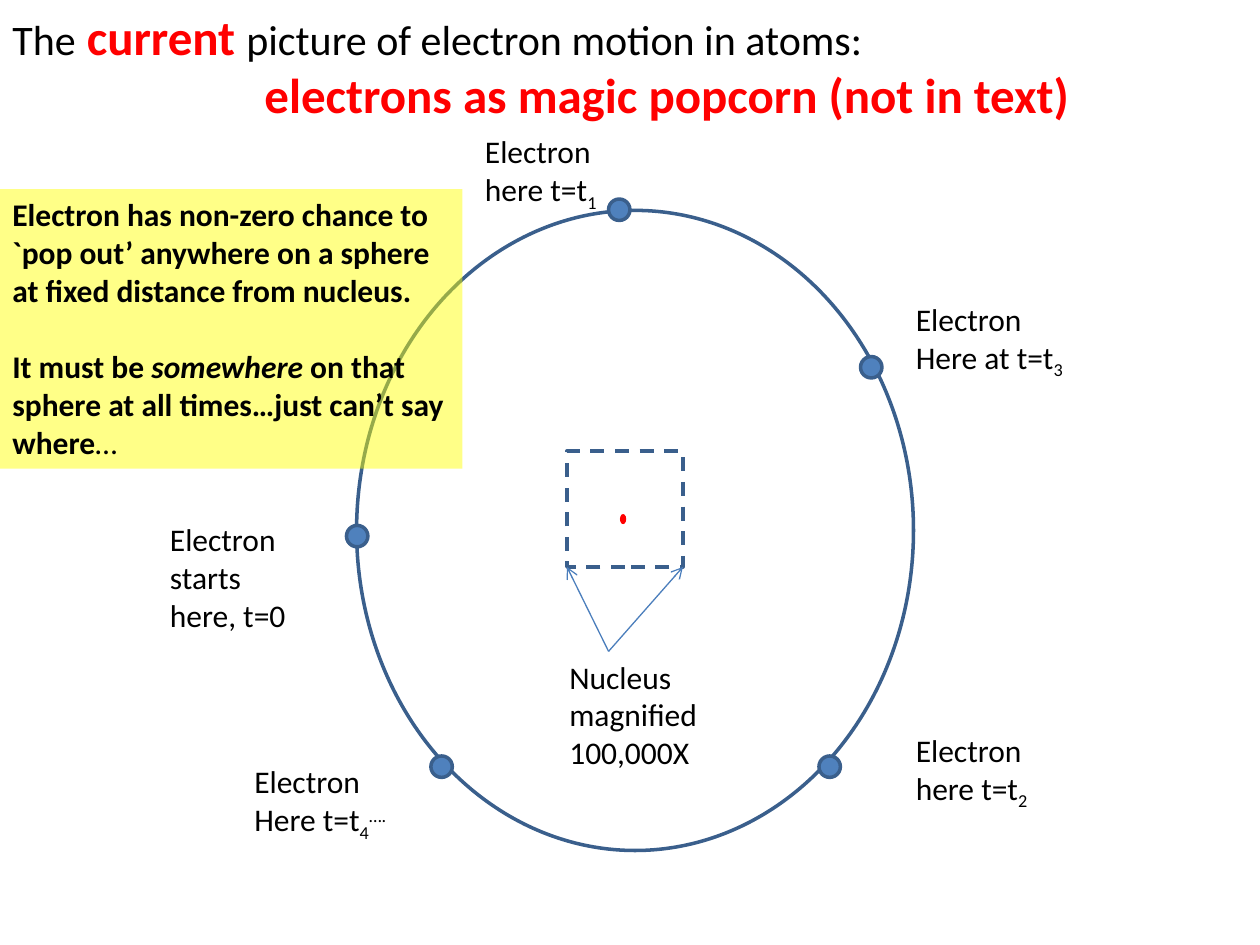
from dataclasses import dataclass
from lxml.etree import SubElement
from pptx import Presentation
from pptx.dml.color import RGBColor
from pptx.enum.dml import MSO_LINE
from pptx.enum.shapes import MSO_CONNECTOR, MSO_SHAPE
from pptx.enum.text import MSO_ANCHOR, PP_ALIGN
from pptx.oxml.ns import qn
from pptx.util import Inches, Pt


@dataclass(frozen=True)
class Theme:
    font: str = "Calibri"
    ink: RGBColor = RGBColor(0, 0, 0)
    accent: RGBColor = RGBColor(255, 0, 0)
    note: RGBColor = RGBColor(255, 255, 0)
    electron: RGBColor = RGBColor(0x4F, 0x81, 0xBD)
    outline: RGBColor = RGBColor(0x3A, 0x5F, 0x8C)
    pointer: RGBColor = RGBColor(0x4B, 0x7E, 0xBC)
    body: Pt = Pt(18)
    title: Pt = Pt(24)
    emphasis: Pt = Pt(28)


THEME = Theme()
BOLD = {"bold": True}
STRONG = {"bold": True, "size": THEME.emphasis}
ALERT = {**STRONG, "color": THEME.accent}
PLAIN = {"size": THEME.title}
LOWER = {"baseline": -25000}
UPPER = {"baseline": 30000}

DOT = 0.17
ELECTRONS = [
    ((2.75, 4.17), (1.25, 4.08, 1.25, 1.01), [[("Electron starts here, t=0", {})]]),
    ((4.83, 1.58), (3.75, 1, 1.42, 0.71), [[("Electron here t=t", {}), ("1", LOWER)]]),
    ((6.5, 6), (7.17, 5.75, 2.17, 0.71),
     [[("Electron", {})], [("here t=t", {}), ("2", LOWER)]]),
    ((3.42, 6), (1.92, 6, 1.5, 0.71),
     [[("Electron", {})], [("Here t=t", {}), ("4", LOWER), ("….", UPPER)]]),
    ((6.83, 2.83), (7.17, 2.33, 1.92, 0.71),
     [[("Electron", {})], [("Here at t=t", {}), ("3", LOWER)]]),
]
TITLE = [
    [("The", PLAIN), (" ", STRONG), ("current ", ALERT),
     ("picture of electron motion in atoms:", PLAIN)],
    [("electrons as magic popcorn (not in text)", ALERT)],
]
NOTE = [
    [("Electron has non-zero chance to `pop out’ anywhere on a sphere "
      "at fixed distance from nucleus.", BOLD)],
    [("It must be ", BOLD), ("somewhere", {"bold": True, "italic": True}),
     (" on that sphere at all times…just can’t say where", BOLD), ("…", {})],
]


def inches(values):
    return [Inches(value) for value in values]


def write(frame, paragraphs):
    for name, value in {"word_wrap": True, "vertical_anchor": MSO_ANCHOR.TOP}.items():
        setattr(frame, name, value)
    for index, spans in enumerate(paragraphs):
        para = frame.add_paragraph() if index else frame.paragraphs[0]
        para.alignment = PP_ALIGN.LEFT
        for text, style in spans:
            span = para.add_run()
            span.text = text
            formats = {"name": THEME.font, "size": THEME.body, "color": THEME.ink, **style}
            span.font.color.rgb = formats.pop("color")
            baseline = formats.pop("baseline", None)
            for name, value in formats.items():
                setattr(span.font, name, value)
            if baseline:
                span.font._element.set("baseline", str(baseline))


def add_text(page, box, paragraphs):
    frame = page.shapes.add_textbox(*inches(box)).text_frame
    write(frame, paragraphs)
    return frame


def add_figure(page, kind, box, fill=None, outline=None):
    figure = page.shapes.add_shape(kind, *inches(box))
    figure.shadow.inherit = False
    if fill is None:
        figure.fill.background()
    else:
        figure.fill.solid()
        figure.fill.fore_color.rgb = fill
    if outline is None:
        figure.line.fill.background()
    else:
        figure.line.color.rgb = outline
        figure.line.width = Pt(2)
    return figure


def add_pointer(page, tip, tail):
    pointer = page.shapes.add_connector(MSO_CONNECTOR.STRAIGHT, *inches(tip + tail))
    pointer.line.color.rgb = THEME.pointer
    pointer.line.width = Pt(0.75)
    SubElement(pointer.line._get_or_add_ln(), qn("a:headEnd"), type="arrow")
    SubElement(pointer._element.spPr, qn("a:effectLst"))


def add_title(page, box):
    frame = add_text(page, box, TITLE)
    properties = frame.paragraphs[1]._p.get_or_add_pPr()
    properties.set("marL", str(Inches(2)))


def add_nucleus(page, box):
    left, top, width, height = box
    frame = add_figure(page, MSO_SHAPE.RECTANGLE, box, outline=THEME.outline)
    frame.line.dash_style = MSO_LINE.DASH
    add_figure(page, MSO_SHAPE.OVAL, (left + 0.42, top + 0.5, 0.05, 0.08), THEME.accent)
    bottom = top + height
    for corner in (left, left + width):
        add_pointer(page, (corner, bottom), (left + 0.33, bottom + 0.67))
    add_text(page, (left - 0.08, bottom + 0.67, 1.58, 1.01),
             [[("Nucleus magnified 100,000X", {})]])


def add_orbit(page, box):
    add_figure(page, MSO_SHAPE.OVAL, box, outline=THEME.outline)
    for corner, label_box, label in ELECTRONS:
        add_figure(page, MSO_SHAPE.OVAL, (*corner, DOT, DOT), THEME.electron, THEME.outline)
        add_text(page, label_box, label)


def add_note(page, box):
    note = add_figure(page, MSO_SHAPE.RECTANGLE, box, THEME.note)
    color = note._element.spPr.find(qn("a:solidFill")).find(qn("a:srgbClr"))
    SubElement(color, qn("a:alpha"), val="47000")
    write(note.text_frame, NOTE)
    note.text_frame.paragraphs[1].space_before = Pt(22)


def main():
    deck = Presentation()
    deck.slide_width, deck.slide_height = inches((10, 7.5))
    page = deck.slides.add_slide(deck.slide_layouts[6])
    add_orbit(page, (2.83, 1.67, 4.42, 5.08))
    add_nucleus(page, (4.5, 3.58, 0.92, 0.92))
    add_title(page, (0, 0, 9.58, 1.04))
    add_note(page, (0, 1.5, 3.67, 2.22))
    deck.save("out.pptx")


if __name__ == "__main__":
    main()
